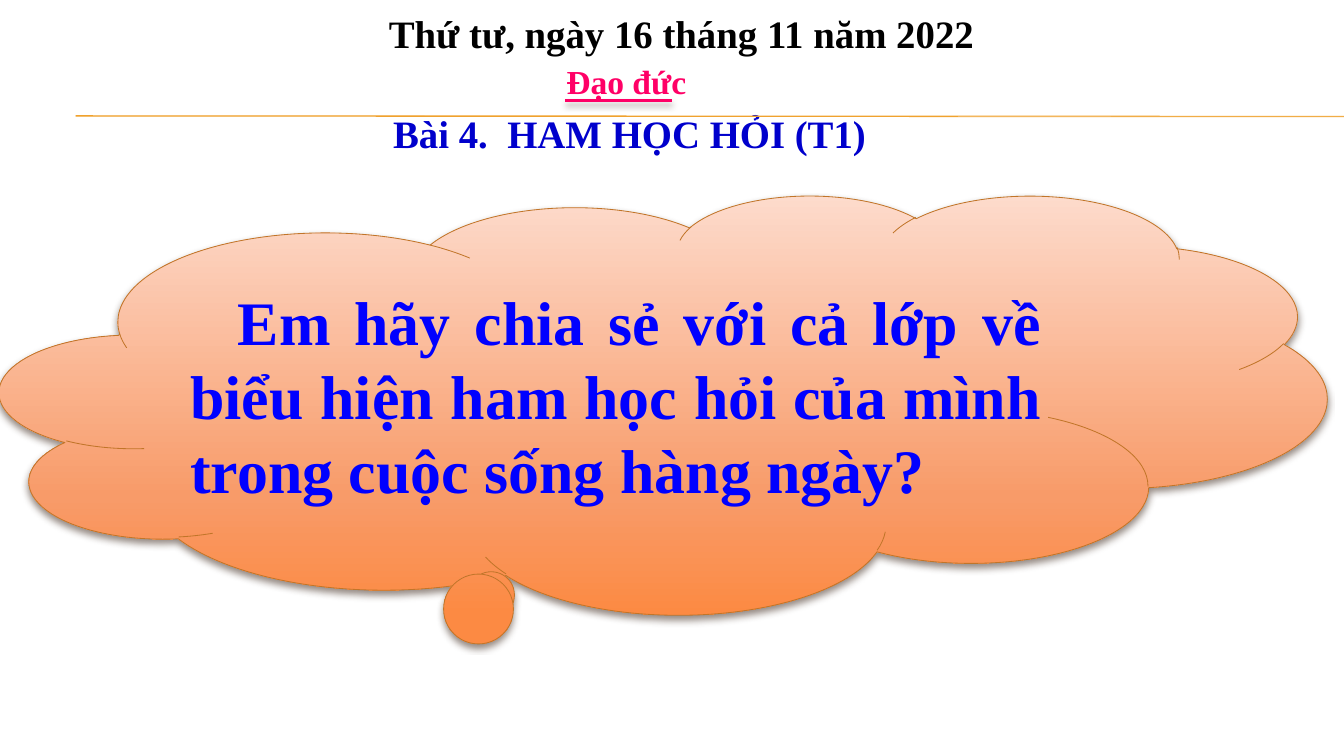
from lxml import etree
from pptx import Presentation
from pptx import util as u
from pptx.dml import color
from pptx.enum import shapes, text
from pptx.oxml import ns

FONT = "Times New Roman"
GOLD, PINK, BLACK = "F0A22E", "FF0066", "000000"
SHADOW = "4E3B30"


def rgb(value):
    return color.RGBColor.from_string(value)


def add_xml(parent, tag, **attributes):
    return etree.SubElement(parent, ns.qn(tag), attributes)


def set_effects(shape, shadow=False):
    """Give the shape its own effect list: empty, or one soft shadow below."""
    effects = add_xml(shape._element.spPr, "a:effectLst")
    if shadow:
        outer = add_xml(effects, "a:outerShdw", blurRad=str(u.Pt(6)),
                        dist=str(u.Pt(4)), dir="5400000", rotWithShape="0")
        tint = add_xml(outer, "a:srgbClr", val=SHADOW)
        add_xml(tint, "a:alpha", val="60000")


def set_gradient(shape, stops):
    """Fill from top to bottom with (percent, colour) stops."""
    shape.fill.gradient()
    gradient = shape._element.spPr.find(ns.qn("a:gradFill"))
    stop_list = gradient.find(ns.qn("a:gsLst"))
    for stop in list(stop_list):
        stop_list.remove(stop)
    for percent, value in stops:
        stop = add_xml(stop_list, "a:gs", pos=str(percent * 1000))
        add_xml(stop, "a:srgbClr", val=value)
    gradient.find(ns.qn("a:lin")).set("ang", "5400000")


def place(shape, left, top, width, height):
    shape.left, shape.top = u.Cm(left), u.Cm(top)
    shape.width, shape.height = u.Cm(width), u.Cm(height)


def write(shape, wording, size, value, align):
    frame = shape.text_frame
    frame.text = wording
    paragraph = frame.paragraphs[0]
    paragraph.alignment = align
    font = paragraph.runs[0].font
    font.name, font.size, font.bold = FONT, u.Pt(size), True
    font.color.rgb = rgb(value)
    return paragraph


def write_heading(shape, wording, size, value, align=text.PP_ALIGN.LEFT):
    write(shape, wording, size, value, align)
    frame = shape.text_frame
    frame.word_wrap = False
    frame.auto_size = text.MSO_AUTO_SIZE.SHAPE_TO_FIT_TEXT
    frame.vertical_anchor = text.MSO_ANCHOR.TOP


def add_heading(container, box, wording, size, value):
    heading = container.add_textbox(*map(u.Cm, box))
    write_heading(heading, wording, size, value)


def add_line(container, start, end, value, width, shadow=False):
    line = container.add_connector(shapes.MSO_CONNECTOR.STRAIGHT,
                                   *map(u.Cm, start + end))
    line.line.color.rgb = rgb(value)
    line.line.width = u.Pt(width)
    set_effects(line, shadow)


def add_question_cloud(slide, wording):
    cloud = slide.shapes.add_shape(shapes.MSO_SHAPE.CLOUD_CALLOUT,
                                   *map(u.Cm, (0, 6.55, 44.63, 14.1)))
    cloud.adjustments[0], cloud.adjustments[1] = -0.132, 0.463
    set_gradient(cloud, [(0, "FDDBCC"), (72, "F89B69"), (100, "FC8A43")])
    cloud.line.color.rgb = rgb("C17529")
    cloud.line.width = u.Pt(0.79)
    set_effects(cloud, shadow=True)
    cloud.text_frame.word_wrap = True
    cloud.text_frame.vertical_anchor = text.MSO_ANCHOR.MIDDLE
    paragraph = write(cloud, wording, 59, "0000FF", text.PP_ALIGN.JUSTIFY)
    paragraph._p.get_or_add_pPr().set("indent", str(u.Cm(1.6)))


def add_subject(slide):
    subject = slide.shapes.add_group_shape().shapes
    add_heading(subject, (18.8, 1.91, 4.6, 1.63), "Đạo đức", 32, PINK)
    add_line(subject, (19.02, 3.38), (22.61, 3.38), PINK, 2, shadow=True)


def main():
    presentation = Presentation()
    presentation.slide_width, presentation.slide_height = u.Cm(45.21), u.Cm(25.4)
    slide = presentation.slides.add_slide(presentation.slide_layouts[5])

    for top in (3.89, 3.91):
        add_line(slide.shapes, (2.54, top), (45.21, top + 0.02), GOLD, 0.75)
    add_question_cloud(slide, "Em hãy chia sẻ với cả lớp về biểu hiện ham học hỏi "
                              "của mình trong cuộc sống hàng ngày?")
    add_subject(slide)

    title = slide.shapes.title
    place(title, 12.88, 3.58, 16.59, 1.83)
    write_heading(title, "Bài 4.  HAM HỌC HỎI (T1)", 37, "0000CC",
                  text.PP_ALIGN.CENTER)
    add_heading(slide.shapes, (12.83, 0.2, 20.42, 1.83),
                "Thứ tư, ngày 16 tháng 11 năm 2022", 37, BLACK)

    presentation.save("out.pptx")


if __name__ == "__main__":
    main()
